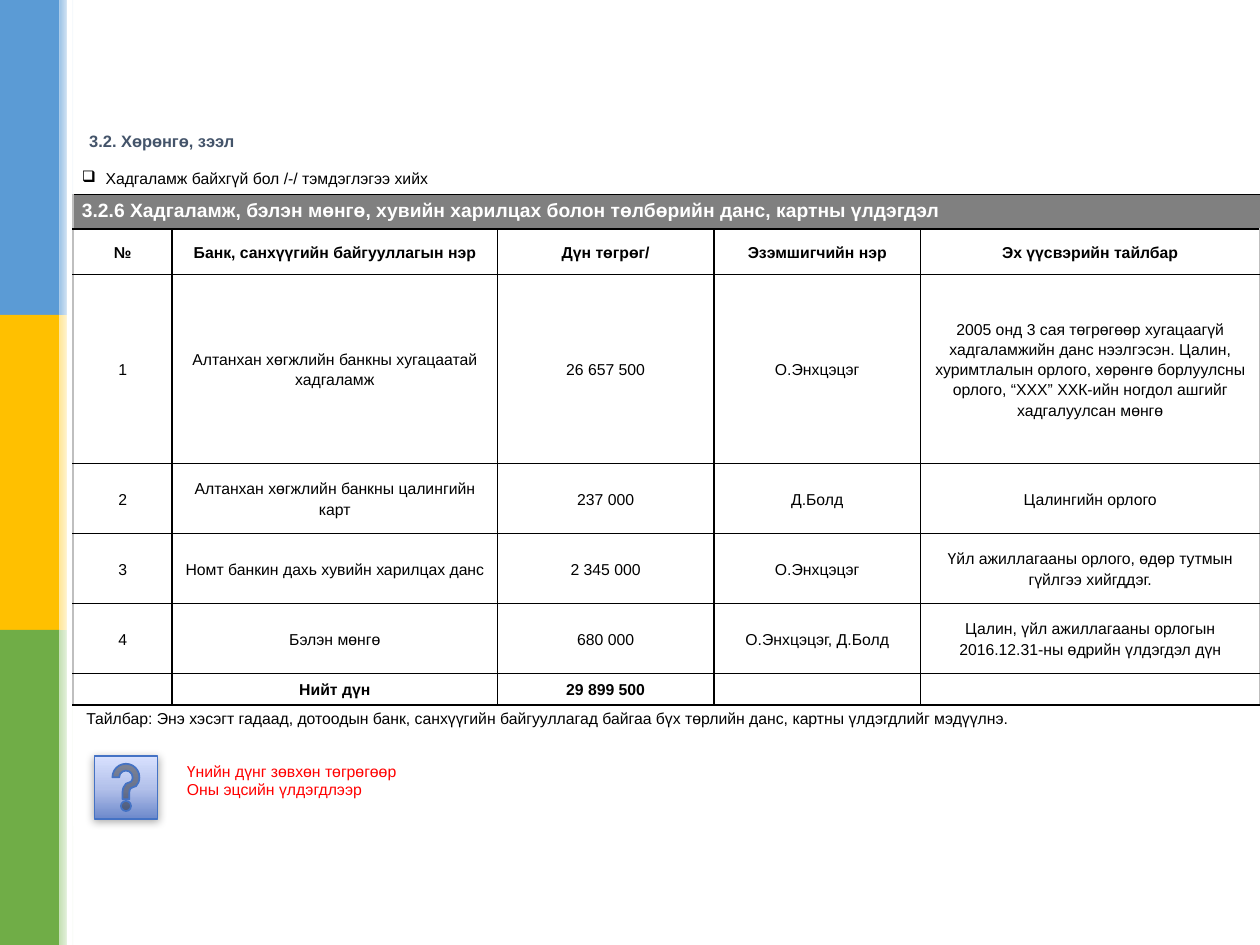
import copy
from lxml import etree
from pptx import Presentation
from pptx import oxml
from pptx.dml.color import RGBColor
from pptx.enum import shapes, text
from pptx.oxml.ns import qn
from pptx.util import Pt

BLACK, WHITE = RGBColor(0, 0, 0), RGBColor(255, 255, 255)
GREY, EDGE = RGBColor(0x80, 0x80, 0x80), RGBColor(0xBF, 0xBF, 0xBF)
RED, SLATE = RGBColor(255, 0, 0), RGBColor(0x44, 0x54, 0x6A)
LINE_BLUE = RGBColor(0x44, 0x72, 0xC4)
BANDS = [  # solid colour, start of the fade beside it
    (RGBColor(0x5B, 0x9B, 0xD5), RGBColor(0x9D, 0xC3, 0xE6)),
    (RGBColor(0xFF, 0xC0, 0x00), RGBColor(0xFF, 0xE6, 0x99)),
    (RGBColor(0x70, 0xAD, 0x47), RGBColor(0xC5, 0xE0, 0xB4)),
]
ICON_STOPS = [(0, RGBColor(0x6D, 0x89, 0xCB)), (0.48, RGBColor(0xB2, 0xC0, 0xEA)),
              (1, RGBColor(0xD8, 0xE1, 0xFE))]
SHADOW = ('<a:effectLst xmlns:a="http://schemas.openxmlformats.org/drawingml/2006/main">'
          '<a:outerShdw blurRad="63500" dist="12700" dir="5400000" algn="ctr" rotWithShape="0">'
          '<a:srgbClr val="000000"><a:alpha val="32000"/></a:srgbClr>'
          '</a:outerShdw></a:effectLst>')

COLS = [56.6, 185.8, 123.8, 118, 194]
ROWS = [17, 19.5, 26, 108, 40, 40, 40, 18, 69.5]
HINT = "Хадгаламж байхгүй бол /-/ тэмдэглэгээ хийх"
HEADING = "3.2.6 Хадгаламж, бэлэн мөнгө, хувийн харилцах болон төлбөрийн данс, картны үлдэгдэл"
GRID = [
    ["№", "Банк, санхүүгийн байгууллагын нэр", "Дүн төгрөг/", "Эзэмшигчийн нэр",
     "Эх үүсвэрийн тайлбар"],
    ["1", "Алтанхан хөгжлийн банкны хугацаатай хадгаламж", "26 657 500", "О.Энхцэцэг",
     "2005 онд 3 сая төгрөгөөр хугацаагүй хадгаламжийн данс нээлгэсэн. Цалин, "
     "хуримтлалын орлого, хөрөнгө борлуулсны орлого, “ХХХ” ХХК-ийн ногдол ашгийг "
     "хадгалуулсан мөнгө"],
    ["2", "Алтанхан хөгжлийн банкны цалингийн карт", "237 000", "Д.Болд",
     "Цалингийн орлого"],
    ["3", "Номт банкин дахь хувийн харилцах данс", "2 345 000", "О.Энхцэцэг",
     "Үйл ажиллагааны орлого, өдөр тутмын гүйлгээ хийгддэг."],
    ["4", "Бэлэн мөнгө", "680 000", "О.Энхцэцэг, Д.Болд",
     "Цалин, үйл ажиллагааны орлогын 2016.12.31-ны өдрийн үлдэгдэл дүн"],
    ["", "Нийт дүн", "29 899 500", "", ""],
]
NOTE = ("Тайлбар: Энэ хэсэгт гадаад, дотоодын банк, санхүүгийн байгууллагад байгаа "
        "бүх төрлийн данс, картны үлдэгдлийг мэдүүлнэ.")
TIPS = ["Үнийн дүнг зөвхөн төгрөгөөр", "Оны эцсийн үлдэгдлээр"]


def style(p, size, color, bold=False, align=text.PP_ALIGN.LEFT):
    p.alignment = align
    for f in [p.font] + [r.font for r in p.runs]:
        f.name, f.size, f.bold = "Arial", Pt(size), bold
        f.color.rgb = color


def indent(p, left, first=0):
    pPr = p._p.get_or_add_pPr()
    pPr.set("marL", str(Pt(left)))
    pPr.set("indent", str(Pt(first)))
    return pPr


def gradient(sp, stops, angle):
    sp.fill.gradient()
    sp.fill.gradient_angle = angle
    gs = sp._element.spPr.find(".//" + qn("a:gsLst"))
    while len(gs) < len(stops):
        gs.append(copy.deepcopy(gs[-1]))
    for stop, (pos, color) in zip(sp.fill.gradient_stops, stops):
        stop.position, stop.color.rgb = pos, color


def add_box(s, x, y, w, h, color=None, kind=shapes.MSO_SHAPE.RECTANGLE):
    sp = s.shapes.add_shape(kind, Pt(x), Pt(y), Pt(w), Pt(h))
    sp.shadow.inherit = False
    sp.line.fill.background()
    if color is not None:
        sp.fill.solid()
        sp.fill.fore_color.rgb = color
    return sp


def add_sidebar(s):
    for i, (color, tint) in enumerate(BANDS):
        add_box(s, 0, i * 180, 34, 180, color)
        gradient(add_box(s, 34, i * 180, 8.4, 180), [(0, tint), (1, WHITE)], 0)
    add_box(s, 38.2, 0, 3, 540, WHITE)


def add_title(s):
    sp = s.shapes.title
    sp.left, sp.top, sp.width, sp.height = Pt(43.8), Pt(71.8), Pt(479), Pt(18)
    tf = sp.text_frame
    tf.text = "3.2. Хөрөнгө, зээл"
    tf.vertical_anchor = text.MSO_ANCHOR.MIDDLE
    style(tf.paragraphs[0], 9.4, SLATE, True)


def border(cell, **sides):
    """Give each side (L, R, T, B) its colour, or None for no line."""
    tcPr = cell._tc.get_or_add_tcPr()
    for i, side in enumerate("LRTB"):
        color = sides.get(side)
        ln = etree.Element(qn("a:ln" + side), w=str(Pt(1)))
        if color is None:
            etree.SubElement(ln, qn("a:noFill"))
        else:
            fill = etree.SubElement(ln, qn("a:solidFill"))
            etree.SubElement(fill, qn("a:srgbClr"), val=str(color))
        tcPr.insert(i, ln)


def set_cell(cell, lines, mx=5, my=3, fill=None):
    cell.margin_left = cell.margin_right = Pt(mx)
    cell.margin_top = cell.margin_bottom = Pt(my)
    if fill is None:
        cell.fill.background()
    else:
        cell.fill.solid()
        cell.fill.fore_color.rgb = fill
    cell.text_frame.text = "\n".join(lines)
    return cell.text_frame.paragraphs


def add_savings_table(s):
    last = len(ROWS) - 1
    frame = s.shapes.add_table(len(ROWS), len(COLS), Pt(41.8), Pt(94.3),
                               Pt(sum(COLS)), Pt(sum(ROWS)))
    tbl = frame.table
    tbl.first_row = tbl.horz_banding = False
    for col, w in zip(tbl.columns, COLS):
        col.width = Pt(w)
    for row, h in zip(tbl.rows, ROWS):
        row.height = Pt(h)
    for i in (0, 1, last):
        tbl.cell(i, 0).merge(tbl.cell(i, len(COLS) - 1))

    # Hint, heading and note run across all columns
    p = set_cell(tbl.cell(0, 0), [HINT])[0]
    style(p, 9, BLACK)
    bullet = etree.SubElement(indent(p, 13.5, -13.5), qn("a:buChar"))
    bullet.set("char", "❑")
    style(set_cell(tbl.cell(1, 0), [HEADING], fill=GREY)[0], 11, WHITE, True)
    note, *tips = set_cell(tbl.cell(last, 0), [NOTE] + TIPS, fill=WHITE)
    style(note, 9, BLACK)
    indent(note, 2.5)
    for p in tips:
        style(p, 9, RED)
        indent(p, 60)
    tips[0].space_before = Pt(20.5)

    # Account rows, with bold header and total
    for i, values in enumerate(GRID):
        for j, value in enumerate(values):
            cell = tbl.cell(i + 2, j)
            p = set_cell(cell, [value], 4.5, 0, WHITE)[0]
            cell.vertical_anchor = text.MSO_ANCHOR.MIDDLE
            style(p, 9, BLACK, i in (0, len(GRID) - 1), text.PP_ALIGN.CENTER)
            p.line_spacing = 1.15

    # Borders: grey outer edges, black grid, open top and bottom rows
    for i in range(len(ROWS)):
        for j in range(len(COLS)):
            cell = tbl.cell(i, j)
            if i == 0:
                border(cell, B=BLACK)
            elif i == last:
                border(cell, T=BLACK)
            else:
                inner = None if i == 1 else BLACK
                border(cell, T=BLACK, B=BLACK, L=inner if j else EDGE,
                       R=inner if j < len(COLS) - 1 else EDGE)


def add_help_icon(s):
    sp = add_box(s, 54, 432, 36, 36, kind=shapes.MSO_SHAPE.ACTION_BUTTON_HELP)
    gradient(sp, ICON_STOPS, 90)
    sp.line.color.rgb, sp.line.width = LINE_BLUE, Pt(1)
    spPr = sp._element.spPr
    spPr.replace(spPr.find(qn("a:effectLst")), oxml.parse_xml(SHADOW))


def main():
    prs = Presentation()
    prs.slide_width, prs.slide_height = Pt(720), Pt(540)
    s = prs.slides.add_slide(prs.slide_layouts[5])
    add_sidebar(s)
    add_title(s)
    add_savings_table(s)
    add_help_icon(s)
    prs.save("out.pptx")


if __name__ == "__main__":
    main()
